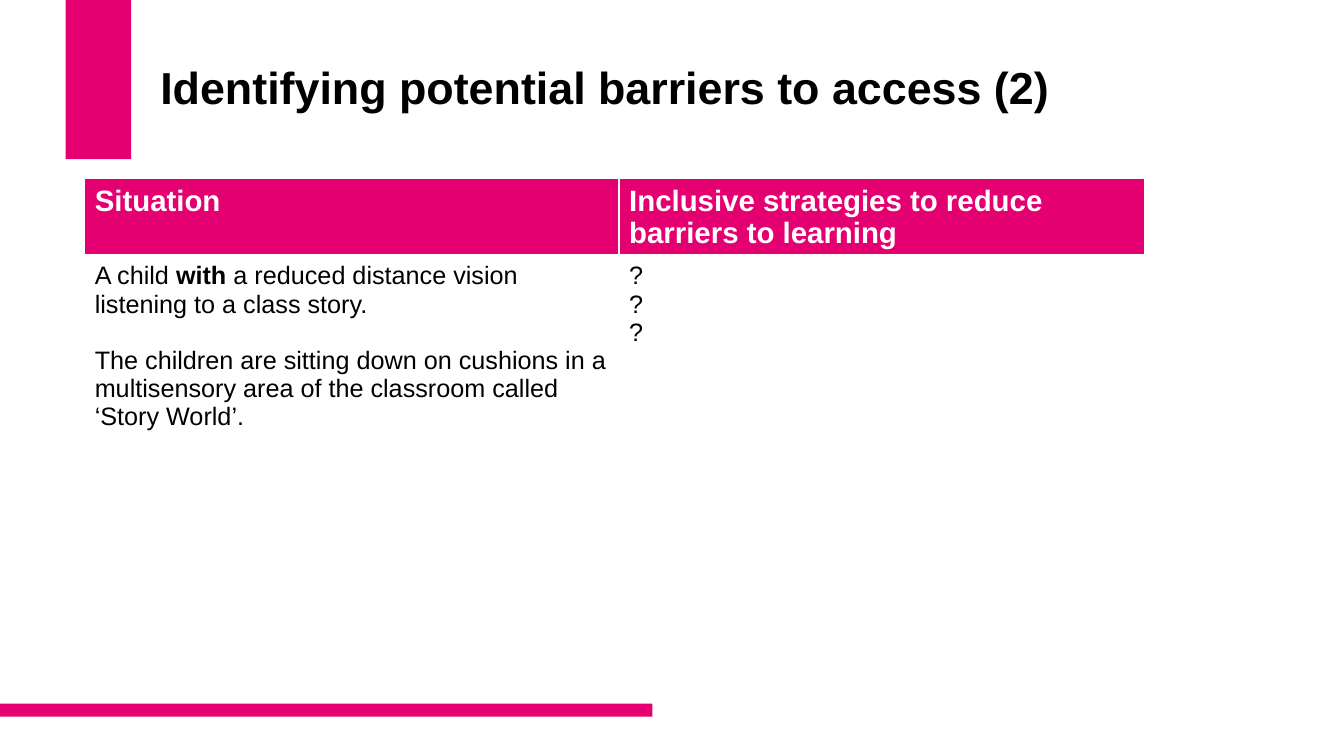
import pptx
import pptx.util
import pptx.dml.color
import pptx.enum.shapes
import pptx.enum.text
import lxml.etree

Inches, Pt = pptx.util.Inches, pptx.util.Pt
RGB = pptx.dml.color.RGBColor.from_string
HUES = {"pink": "E50071", "white": "FFFFFF", "black": "000000"}

deck = pptx.Presentation()
deck.slide_width, deck.slide_height = Inches(13.33), Inches(7.5)
slide = deck.slides.add_slide(deck.slide_layouts[5])


def style(font, size, hue, bold):
    font.name, font.size, font.bold = "Arial", Pt(size), bold
    font.color.rgb = RGB(HUES[hue])


def edge(cell, side, width):
    tag = pptx.oxml.ns.qn("a:ln" + side)
    props = cell._tc.get_or_add_tcPr()
    line = lxml.etree.SubElement(props, tag, w=str(Pt(width)))
    fill = lxml.etree.SubElement(line, pptx.oxml.ns.qn("a:solidFill"))
    lxml.etree.SubElement(fill, pptx.oxml.ns.qn("a:srgbClr"), val=HUES["white"])


# Pink bars at the top and the foot
for box in [(0.65, 0, 0.65, 1.58), (0, 6.98, 6.47, 0.13)]:
    bar = slide.shapes.add_shape(
        pptx.enum.shapes.MSO_SHAPE.RECTANGLE, *map(Inches, box))
    bar.shadow.inherit = False
    bar.fill.solid()
    bar.fill.fore_color.rgb = RGB(HUES["pink"])
    bar.line.fill.background()

# Title, raised by a deep bottom margin
title = slide.shapes.title
title.left, title.top, title.width, title.height = map(
    Inches, (1.49, 0.4, 9.6, 1.45))
frame = title.text_frame
frame.text = "Identifying potential barriers to access (2)"
frame.word_wrap = True
frame.auto_size = pptx.enum.text.MSO_AUTO_SIZE.NONE
frame.vertical_anchor = pptx.enum.text.MSO_ANCHOR.MIDDLE
frame.margin_bottom = Inches(0.51)
head = frame.paragraphs[0]
head.alignment = pptx.enum.text.PP_ALIGN.LEFT
head.line_spacing = 0.9
style(head.font, 32, "black", True)

# Table: each cell is a list of paragraphs, each paragraph a list of runs
ROWS = [
    [[["Situation"]],
     [["Inclusive strategies to reduce barriers to learning"]]],
    [[["A child ", "with ",
       "a reduced distance vision listening to a class story."],
      ["The children are sitting down on cushions in a multisensory area "
       "of the classroom called ‘Story World’."]],
     [["?"], ["?"], ["?"]]],
]
# Font size, text colour, bold, fill, bottom edge
LOOKS = [(21, "white", True, "pink", 3), (18, "black", False, "white", 1)]

table = slide.shapes.add_table(
    2, 2, Inches(0.84), Inches(1.77), Inches(10.51), Inches(2.23)).table
for col, width in zip(table.columns, (5.3, 5.21)):
    col.width = Inches(width)
for row, height in zip(table.rows, (0.66, 1.57)):
    row.height = Inches(height)

for row, texts, (size, hue, bold, fill, base) in zip(table.rows, ROWS, LOOKS):
    for cell, paras in zip(row.cells, texts):
        cell.margin_left = cell.margin_right = Inches(0.1)
        cell.margin_top = cell.margin_bottom = Inches(0.06)
        for side, width in zip("LRTB", (1, 1, 1, base)):
            edge(cell, side, width)
        cell.fill.solid()
        cell.fill.fore_color.rgb = RGB(HUES[fill])
        for i, runs in enumerate(paras):
            body = cell.text_frame
            para = body.add_paragraph() if i else body.paragraphs[0]
            for text in runs:
                para.add_run().text = text
            style(para.font, size, hue, bold)

# Stress one word and part the two paragraphs of the situation
first, second = table.cell(1, 0).text_frame.paragraphs
first.runs[1].font.bold = True
second.space_before = Pt(20)

deck.save("out.pptx")
